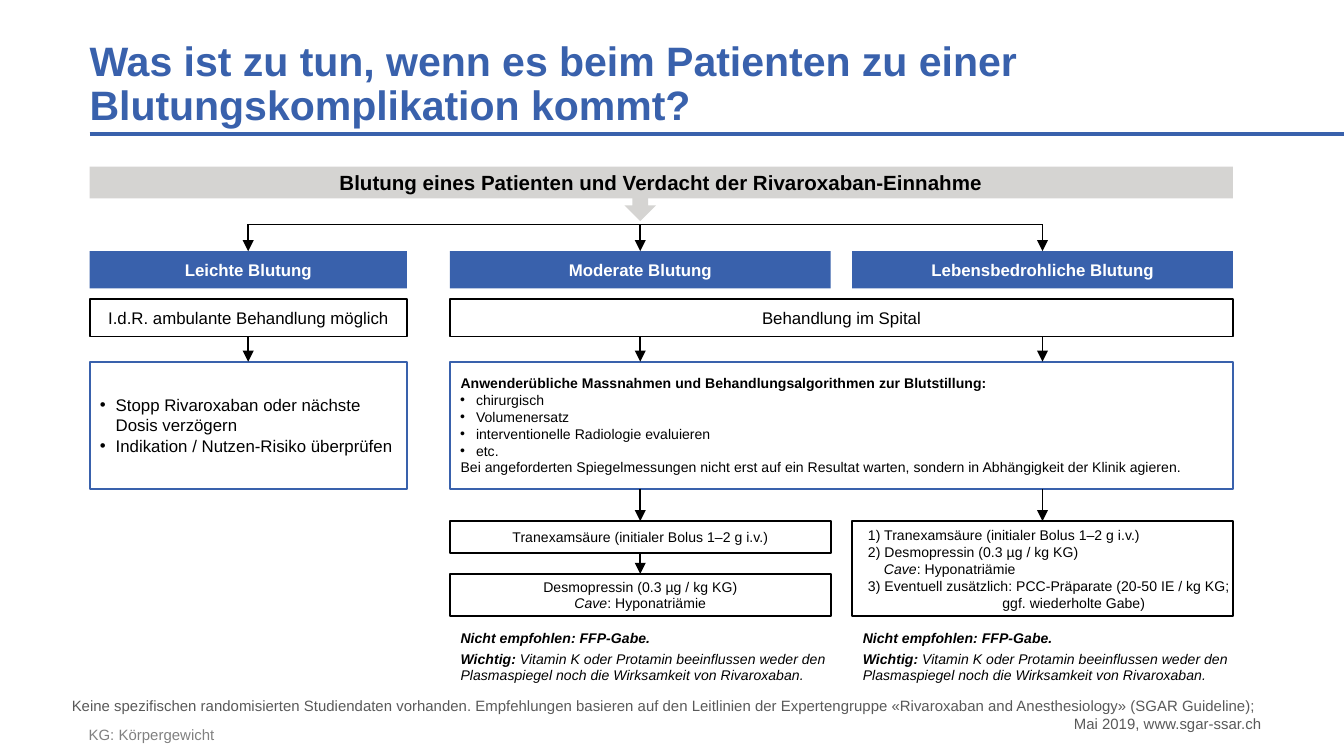
import dataclasses
import typing

import lxml.etree
import pptx
import pptx.dml.color
import pptx.enum.shapes
import pptx.enum.text
import pptx.oxml.ns
import pptx.util

Pt = pptx.util.Pt
qn = pptx.oxml.ns.qn
Shape = pptx.enum.shapes.MSO_SHAPE
Align = pptx.enum.text.PP_ALIGN
Anchor = pptx.enum.text.MSO_ANCHOR

HUES = {"blue": "3961AC", "gray": "D5D4D2", "black": "000000",
        "white": "FFFFFF", "foot": "595959", "note": "808080"}

LEFT, MID, RIGHT = 48, 241, 456.5
SLIM, HALF = 170, 204
WIDE = RIGHT + HALF - MID
FULL = RIGHT + HALF - LEFT
AXES = [LEFT + SLIM / 2, MID + HALF / 2, RIGHT + HALF / 2]
BAR, FORK, HEAD, CARE, STEP, DRUG = 89.3, 120.2, 134.6, 160.3, 193.8, 279.2
ROW, TALL = 20, 68


@dataclasses.dataclass
class Para:
    runs: list[tuple[str, str]]
    left: float = 0
    hang: float = 0
    dot: bool = False
    after: float = 0


@dataclasses.dataclass
class Box:
    name: str
    x: float
    y: float
    w: float
    h: float
    paras: list[Para]
    fill: str = "white"
    line: str | None = "black"
    size: float = 9
    ink: str = "black"
    align: Align = Align.CENTER


def plain(text: str, style: str = "", **kind: typing.Any) -> Para:
    return Para([(text, style)], **kind)


def point(text: str) -> Para:
    return plain(text, left=14, hang=-8.5, dot=True)


def color(name: str) -> pptx.dml.color.RGBColor:
    return pptx.dml.color.RGBColor.from_string(HUES[name])


def write(shape: typing.Any, paras: list[Para], size: float = 9, ink: str = "black",
          align: Align = Align.LEFT, anchor: Anchor = Anchor.MIDDLE,
          space: float = 1.0) -> None:
    frame = shape.text_frame
    frame.word_wrap = True
    frame.auto_size = pptx.enum.text.MSO_AUTO_SIZE.NONE
    frame.vertical_anchor = anchor
    frame.margin_left = frame.margin_top = frame.margin_right = frame.margin_bottom = 0
    for place, para in enumerate(paras):
        block = frame.add_paragraph() if place else frame.paragraphs[0]
        block.alignment = align
        block.line_spacing = space
        block.space_after = Pt(para.after)
        props = block._p.get_or_add_pPr()
        props.set("marL", str(Pt(para.left)))
        props.set("indent", str(Pt(para.hang)))
        if para.dot:
            lxml.etree.SubElement(props, qn("a:buFont")).set("typeface", "Arial")
            lxml.etree.SubElement(props, qn("a:buChar")).set("char", "•")
        for text, style in para.runs:
            for order, part in enumerate(text.split("\n")):
                if order:
                    block.add_line_break()
                if part:
                    run = block.add_run()
                    run.text = part
                    run.font.name = "Arial"
                    run.font.size = Pt(size)
                    run.font.bold = "b" in style
                    run.font.italic = "i" in style
                    run.font.color.rgb = color(ink)


def place(slide: typing.Any, kind: Shape, x: float, y: float, w: float, h: float,
          fill: str, line: str | None = None) -> typing.Any:
    shape = slide.shapes.add_shape(kind, Pt(x), Pt(y), Pt(w), Pt(h))
    shape.shadow.inherit = False
    shape.fill.solid()
    shape.fill.fore_color.rgb = color(fill)
    if line:
        shape.line.color.rgb = color(line)
        shape.line.width = Pt(1)
    else:
        shape.line.fill.background()
    return shape


def draw(slide: typing.Any, box: Box) -> typing.Any:
    shape = place(slide, Shape.RECTANGLE, box.x, box.y, box.w, box.h, box.fill, box.line)
    write(shape, box.paras, size=box.size, ink=box.ink, align=box.align)
    return shape


def label(slide: typing.Any, x: float, y: float, w: float, h: float,
          paras: list[Para], **form: typing.Any) -> None:
    write(slide.shapes.add_textbox(Pt(x), Pt(y), Pt(w), Pt(h)), paras, **form)


def link(slide: typing.Any, x: float, y: float, to_x: float, to_y: float,
         width: float = 1, ink: str = "black", tip: bool = False,
         start: typing.Any = None, end: typing.Any = None) -> None:
    line = slide.shapes.add_connector(pptx.enum.shapes.MSO_CONNECTOR.STRAIGHT,
                                      Pt(x), Pt(y), Pt(to_x), Pt(to_y))
    line.line.color.rgb = color(ink)
    line.line.width = Pt(width)
    if tip:
        lxml.etree.SubElement(line.line._get_or_add_ln(), qn("a:tailEnd")).set("type", "triangle")
    lxml.etree.SubElement(line._element.spPr, qn("a:effectLst"))
    if start is not None:
        line.begin_connect(start, 2)
    if end is not None:
        line.end_connect(end, 0)


BOXES = [
    Box("bar", LEFT, BAR, FULL, 17,
        [plain("Blutung eines Patienten und Verdacht der Rivaroxaban-Einnahme", "b")],
        fill="gray", line=None, size=11),
    *[Box(name, x, HEAD, w, ROW, [plain(text, "b")], fill="blue", line=None, ink="white")
      for name, x, w, text in [("light", LEFT, SLIM, "Leichte Blutung"),
                               ("mild", MID, HALF, "Moderate Blutung"),
                               ("grave", RIGHT, HALF, "Lebensbedrohliche Blutung")]],
    Box("home", LEFT, CARE, SLIM, ROW, [plain("I.d.R. ambulante Behandlung möglich")]),
    Box("ward", MID, CARE, WIDE, ROW, [plain("Behandlung im Spital")]),
    Box("stop", LEFT, STEP, SLIM, TALL,
        [point("Stopp Rivaroxaban oder nächste Dosis verzögern"),
         point("Indikation / Nutzen-Risiko überprüfen")],
        line="blue", align=Align.LEFT),
    Box("acts", MID, STEP, WIDE, TALL,
        [plain("Anwenderübliche Massnahmen und Behandlungsalgorithmen zur Blutstillung:",
               "b", left=5.7),
         *map(point, ["chirurgisch", "Volumenersatz",
                      "interventionelle Radiologie evaluieren", "etc."]),
         plain("Bei angeforderten Spiegelmessungen nicht erst auf ein Resultat warten, "
               "sondern in Abhängigkeit der Klinik agieren.", left=5.7)],
        line="blue", size=7.5, align=Align.LEFT),
    Box("first", MID, DRUG, HALF, 17,
        [plain("Tranexamsäure (initialer Bolus 1–2 g i.v.)")], size=7.5),
    Box("next", MID, 307.5, HALF, 22.5,
        [Para([("Desmopressin (0.3 µg / kg KG)\n", ""), ("Cave", "i"),
               (": Hyponatriämie", "")])], size=7.5),
    Box("list", RIGHT, DRUG, HALF, 51,
        [plain("1) Tranexamsäure (initialer Bolus 1–2 g i.v.)", left=8.5),
         plain("2) Desmopressin (0.3 µg / kg KG)", left=8.5),
         Para([("Cave", "i"), (": Hyponatriämie", "")], left=17),
         plain("3) Eventuell zusätzlich: PCC-Präparate (20-50 IE / kg KG; "
               "ggf. wiederholte Gabe)", left=80.5, hang=-72)],
        size=7.5, align=Align.LEFT),
]

ADVICE = [
    plain("Nicht empfohlen: FFP-Gabe.", "bi", after=2),
    Para([("Wichtig: ", "bi"),
          ("Vitamin K oder Protamin beeinflussen weder den Plasmaspiegel "
           "noch die Wirksamkeit von Rivaroxaban.", "i")]),
]


def main() -> None:
    deck = pptx.Presentation()
    deck.slide_width, deck.slide_height = Pt(720), Pt(405)
    slide = deck.slides.add_slide(deck.slide_layouts[5])
    title = slide.shapes.title
    title.left, title.top, title.width, title.height = Pt(LEFT), Pt(21.6), Pt(652), Pt(48)
    write(title, [plain("Was ist zu tun, wenn es beim Patienten zu einer "
                        "Blutungskomplikation kommt?", "b")],
          size=22, ink="blue", anchor=Anchor.BOTTOM, space=0.9)
    link(slide, LEFT, 72, 720, 72, width=2.25, ink="blue")

    place(slide, Shape.DOWN_ARROW, AXES[1] - 8.5, 101.5, 17, 17, "gray")
    made = {box.name: draw(slide, box) for box in BOXES}

    link(slide, AXES[0], FORK, AXES[2], FORK, width=0.75)
    for x, name in zip(AXES, ["light", "mild", "grave"]):
        link(slide, x, FORK, x, HEAD, tip=True, end=made[name])
    link(slide, AXES[0], CARE + ROW, AXES[0], STEP, tip=True,
         start=made["home"], end=made["stop"])
    for x, name in zip(AXES[1:], ["first", "list"]):
        link(slide, x, CARE + ROW, x, STEP, tip=True)
        link(slide, x, STEP + TALL, x, DRUG, tip=True, end=made[name])
    link(slide, AXES[1], DRUG + 17, AXES[1], 307.5, tip=True,
         start=made["first"], end=made["next"])

    for x in [MID, RIGHT]:
        label(slide, x + 5.7, 329, HALF, 45.5, ADVICE, size=7.5)
    label(slide, 23.8, 373, 652, 19.5,
          [plain("Keine spezifischen randomisierten Studiendaten vorhanden. Empfehlungen "
                 "basieren auf den Leitlinien der Expertengruppe «Rivaroxaban and "
                 "Anesthesiology» (SGAR Guideline); \nMai 2019, www.sgar-ssar.ch")],
          size=8, ink="foot", align=Align.RIGHT, anchor=Anchor.BOTTOM)
    label(slide, 47.5, 389, 302, 9.5, [plain("KG: Körpergewicht")],
          size=8, ink="note", anchor=Anchor.BOTTOM)
    deck.save("out.pptx")


if __name__ == "__main__":
    main()
